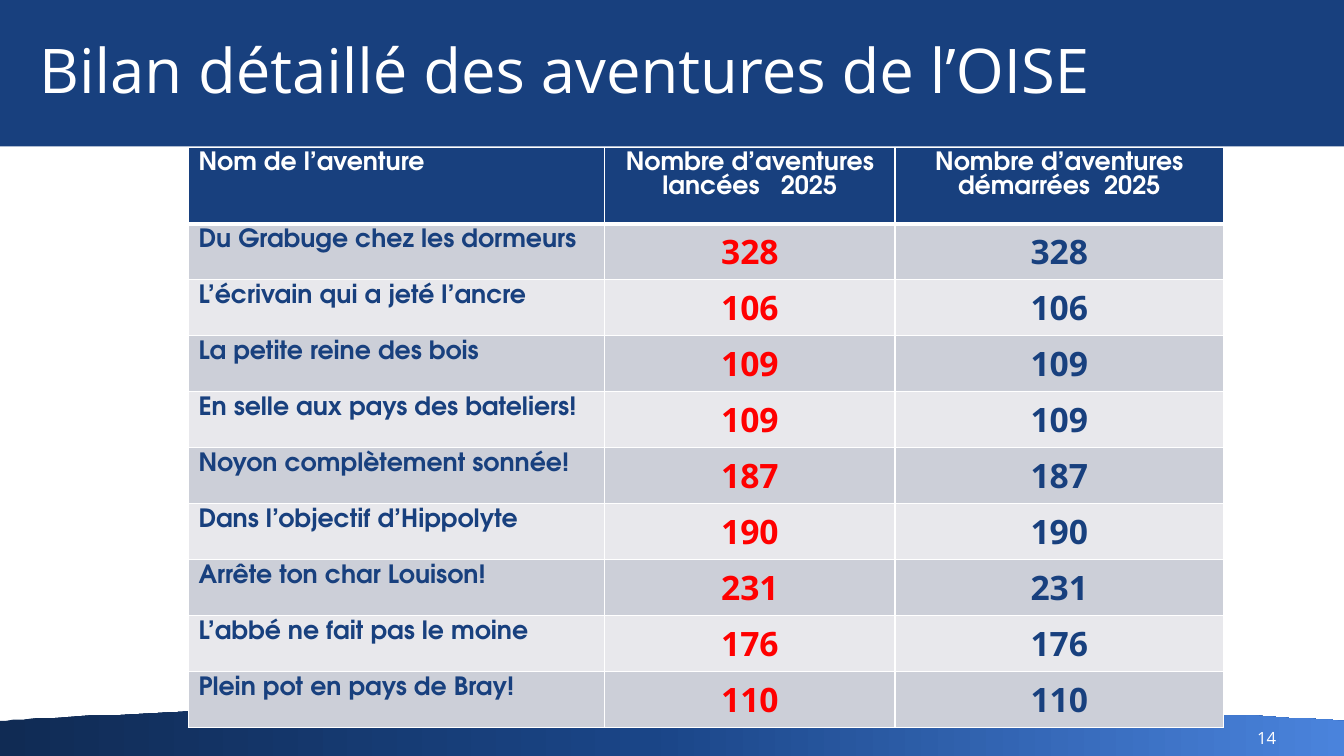
import copy
import pptx
import pptx.util
import pptx.dml.color
import pptx.enum.text
import pptx.oxml
import pptx.oxml.ns

Pt = pptx.util.Pt
ALIGN = pptx.enum.text.PP_ALIGN
ANCHOR = pptx.enum.text.MSO_ANCHOR
BLUE, WHITE, RED = "18407E", "FFFFFF", "FF0000"
BANDS = ["CCCFD8", "E8E8EC"]
SANS, ROUND = "Open Sans", "TeX Gyre Adventor"

HEADS = ["Nom de l’aventure", "Nombre d’aventures lancées   2025",
         "Nombre d’aventures démarrées  2025"]
GAMES = [
    ("Du Grabuge chez les dormeurs", 328),
    ("L’écrivain qui a jeté l’ancre", 106),
    ("La petite reine des bois", 109),
    ("En selle aux pays des bateliers!", 109),
    ("Noyon complètement sonnée!", 187),
    ("Dans l’objectif d’Hippolyte", 190),
    ("Arrête ton char Louison!", 231),
    ("L’abbé ne fait pas le moine", 176),
    ("Plein pot en pays de Bray!", 110),
]


def color(code):
    return pptx.dml.color.RGBColor.from_string(code)


def paint(part, code):
    part.fill.solid()
    part.fill.fore_color.rgb = color(code)


def write(frame, text, size, face, code, bold=False, align=ALIGN.LEFT):
    frame.text = text
    line = frame.paragraphs[0]
    line.alignment = align
    font = line.runs[0].font
    font.size, font.name, font.bold = Pt(size), face, bold
    font.color.rgb = color(code)


def inset(frame, left, top, right, bottom):
    frame.margin_left, frame.margin_top = Pt(left), Pt(top)
    frame.margin_right, frame.margin_bottom = Pt(right), Pt(bottom)


def place(shape, left, top, width, height):
    shape.left, shape.top = Pt(left), Pt(top)
    shape.width, shape.height = Pt(width), Pt(height)


def add_wave(slide, left, top, width, height):
    # Two mirrored Bezier curves form the upper edge
    rise = height * 0.36
    steps = [n / 24 for n in range(25)]
    half = []
    for t in steps:
        x = 3 * (1 - t) * t * t * 0.223 + t ** 3 * 0.5
        half.append((left + width * x, top + rise * (1 - t) ** 3
                     + rise * 3 * (1 - t) ** 2 * t))
    right = [(2 * left + width - x, y) for x, y in half[-2::-1]]
    base = [(left + width, top + height), (left, top + height)]
    edge = half + right + base
    build = slide.shapes.build_freeform(*edge[0], scale=Pt(1))
    build.add_line_segments(edge[1:], close=True)
    wave = build.convert_to_shape()
    wave.shadow.inherit = False
    wave.line.fill.background()

    # Three-stop gradient
    wave.fill.gradient()
    wave.fill.gradient_angle = 0
    stops = wave._element.spPr.find(".//" + pptx.oxml.ns.qn("a:gsLst"))
    stops.insert(1, copy.deepcopy(stops[0]))
    tones = [(0, "102B54"), (0.48, "1A4587"), (1, "4A83DC")]
    for stop, (spot, code) in zip(wave.fill.gradient_stops, tones):
        stop.position = spot
        stop.color.rgb = color(code)


def add_title(slide, left, top, width, height):
    title = slide.shapes.title
    place(title, left, top, width, height)
    paint(title, BLUE)
    frame = title.text_frame
    write(frame, "Bilan détaillé des aventures de l’OISE", 44, SANS, WHITE)
    frame.paragraphs[0].line_spacing = 0.9
    frame.word_wrap = True
    frame.auto_size = pptx.enum.text.MSO_AUTO_SIZE.NONE
    frame.vertical_anchor = ANCHOR.MIDDLE
    inset(frame, 28, 28, 28, 28)


def add_rules(cell, top, bottom):
    props = cell._tc.get_or_add_tcPr()
    for side, wide in zip("LRTB", (1, 1, top, bottom)):
        props.append(pptx.oxml.parse_xml(
            f'<a:ln{side} {pptx.oxml.ns.nsdecls("a")} w="{Pt(wide)}">'
            f'<a:solidFill><a:srgbClr val="{WHITE}"/></a:solidFill>'
            f'</a:ln{side}>'))


def add_grid(slide, left, top, width, height):
    rows = [HEADS] + [(name, str(count), str(count)) for name, count in GAMES]
    grid = slide.shapes.add_table(len(rows), len(HEADS), Pt(left), Pt(top),
                                  Pt(width), Pt(height)).table
    for col, share in zip(grid.columns, (4.13, 2.88, 3.26)):
        col.width = Pt(round(width * share / 10.27, 2))
    head = 54.72
    for r, texts in enumerate(rows):
        grid.rows[r].height = Pt(head if r == 0
                                 else (height - head) / len(GAMES))
        for c, text in enumerate(texts):
            cell = grid.cell(r, c)
            add_rules(cell, 3 if r == 1 else 1, 3 if r == 0 else 1)
            paint(cell, BANDS[(r - 1) % 2] if r else BLUE)
            count = r > 0 and c > 0
            ink = WHITE if r == 0 else RED if c == 1 else BLUE
            write(cell.text_frame, text, 24 if count else 18,
                  SANS if count else ROUND, ink, True,
                  ALIGN.CENTER if c else ALIGN.LEFT)


def add_page(slide, left, top, width, height):
    box = slide.shapes.add_textbox(Pt(left), Pt(top), Pt(width), Pt(height))
    frame = box.text_frame
    frame.word_wrap = True
    frame.vertical_anchor = ANCHOR.MIDDLE
    inset(frame, 7.2, 3.6, 28, 3.6)
    write(frame, "14", 12, SANS, WHITE, align=ALIGN.RIGHT)


def main():
    deck = pptx.Presentation()
    deck.slide_width, deck.slide_height = Pt(960), Pt(540)
    slide = deck.slides.add_slide(deck.slide_layouts[5])
    add_wave(slide, 0, 501, 960, 39)
    add_title(slide, 0, 0, 960, 104.5)
    add_grid(slide, 134.6, 105.1, 739.5, 391.7)
    add_page(slide, 723.6, 516.2, 216, 21.6)
    deck.save("out.pptx")


if __name__ == "__main__":
    main()
